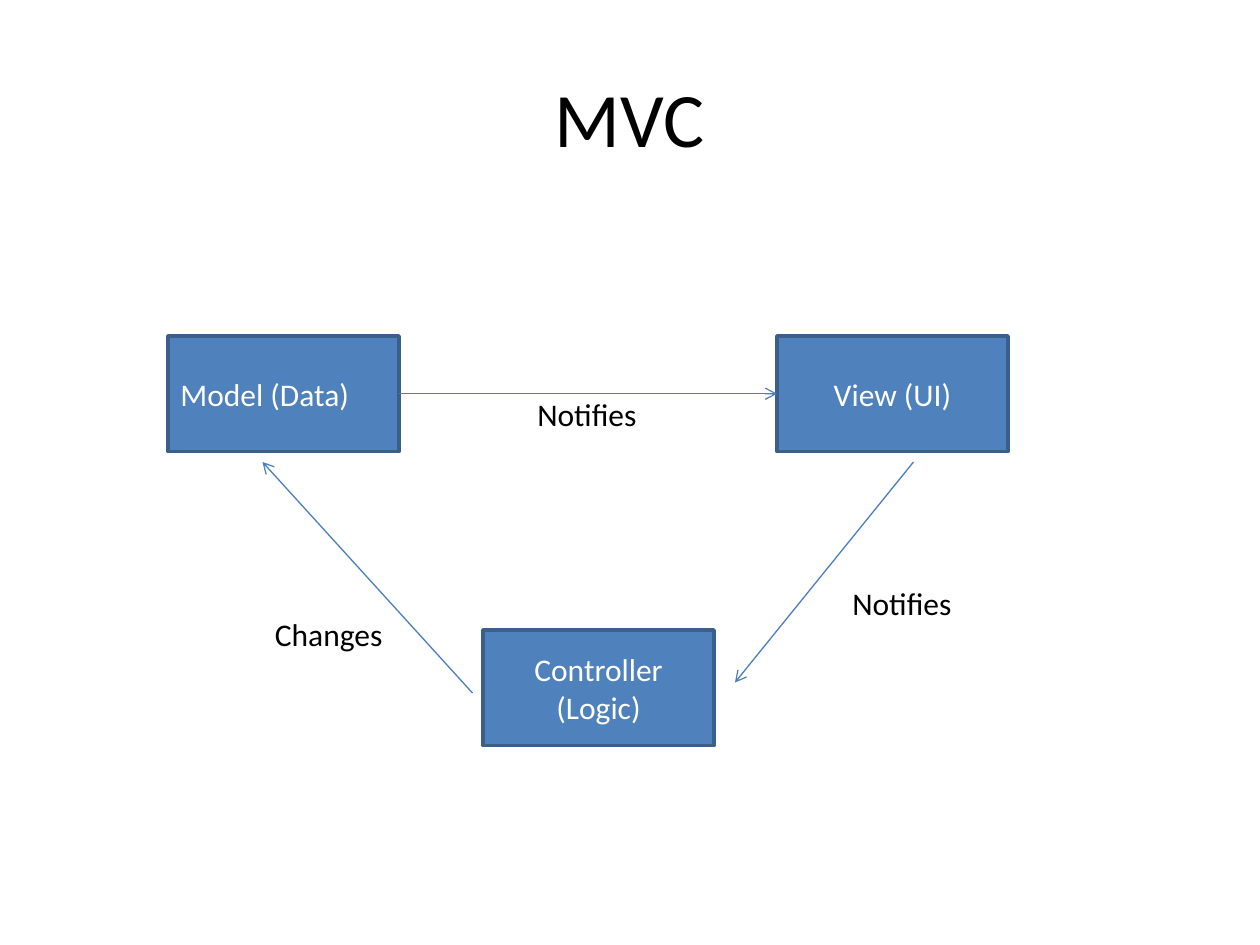
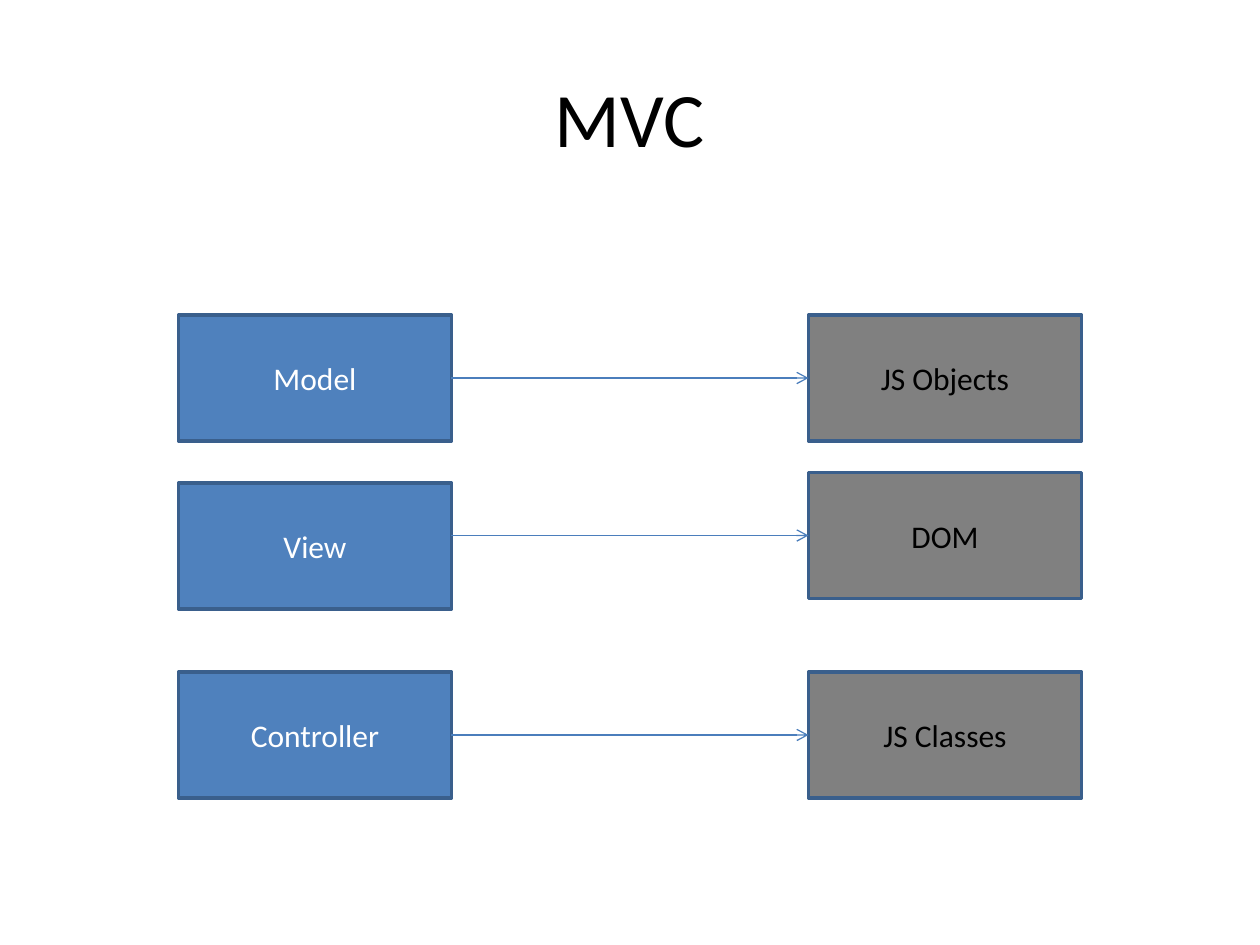
"""Build two slides on MVC: how its parts interact, and what they map to in JavaScript."""
from dataclasses import dataclass

from lxml.etree import SubElement
from pptx import Presentation
from pptx.dml.color import RGBColor
from pptx.enum.shapes import MSO_CONNECTOR, MSO_SHAPE
from pptx.enum.text import MSO_ANCHOR, MSO_AUTO_SIZE, PP_ALIGN
from pptx.oxml.ns import qn
from pptx.util import Inches, Pt


@dataclass(frozen=True)
class Theme:
    font: str = "Calibri"
    title_size: Pt = Pt(44)
    body_size: Pt = Pt(18)
    black: RGBColor = RGBColor(0x00, 0x00, 0x00)
    white: RGBColor = RGBColor(0xFF, 0xFF, 0xFF)
    blue: RGBColor = RGBColor(0x4F, 0x81, 0xBD)
    gray: RGBColor = RGBColor(0x80, 0x80, 0x80)
    border: RGBColor = RGBColor(0x3A, 0x5F, 0x8C)
    arrow: RGBColor = RGBColor(0x4B, 0x7E, 0xBC)


theme = Theme()
presentation = Presentation()
presentation.slide_width = Inches(10)
presentation.slide_height = Inches(7.5)
COLUMN = presentation.slide_width / 120
ROW = presentation.slide_height / 90
TOP, LEFT, BOTTOM, RIGHT = range(4)


def add_box(slide, text, column, row, columns, rows, fill, color):
    """Add a bordered box with centred text at a place on the grid."""
    box = slide.shapes.add_shape(
        MSO_SHAPE.RECTANGLE, round(column * COLUMN), round(row * ROW),
        round(columns * COLUMN), round(rows * ROW))
    box.shadow.inherit = False
    box.fill.solid()
    box.fill.fore_color.rgb = fill
    box.line.color.rgb = theme.border
    box.line.width = Pt(2)
    box.text_frame.text = text
    box.text_frame.vertical_anchor = MSO_ANCHOR.MIDDLE
    paragraph = box.text_frame.paragraphs[0]
    paragraph.alignment = PP_ALIGN.CENTER
    paragraph.font.name = theme.font
    paragraph.font.size = theme.body_size
    paragraph.font.color.rgb = color
    return box


def add_arrow(slide, start, end):
    """Add an open-headed arrow between two (column, row) points."""
    arrow = slide.shapes.add_connector(
        MSO_CONNECTOR.STRAIGHT, round(start[0] * COLUMN), round(start[1] * ROW),
        round(end[0] * COLUMN), round(end[1] * ROW))
    arrow.line.color.rgb = theme.arrow
    arrow.line.width = Pt(0.75)
    properties = arrow.element.spPr
    SubElement(properties.find(qn("a:ln")), qn("a:tailEnd"), type="arrow")
    SubElement(properties, qn("a:effectLst"))
    return arrow


slides = []
for _ in range(2):
    slide = presentation.slides.add_slide(presentation.slide_layouts[5])
    title = slide.shapes.title
    title.left, title.top = round(6 * COLUMN), round(3.6 * ROW)
    title.width, title.height = round(108 * COLUMN), round(15 * ROW)
    title.text_frame.text = "MVC"
    title.text_frame.vertical_anchor = MSO_ANCHOR.MIDDLE
    paragraph = title.text_frame.paragraphs[0]
    paragraph.alignment = PP_ALIGN.CENTER
    paragraph.font.name = theme.font
    paragraph.font.size = theme.title_size
    paragraph.font.color.rgb = theme.black
    slides.append(slide)
cycle_slide, mapping_slide = slides

model, controller, view = [
    add_box(cycle_slide, text, column, row, 22, 11, theme.blue, theme.white)
    for text, column, row in (
        ("Model (Data)", 16, 32), ("Controller (Logic)", 46, 60), ("View (UI)", 74, 32))]
model.text_frame.paragraphs[0].alignment = PP_ALIGN.LEFT

model_to_view = add_arrow(cycle_slide, (38, 37.5), (74, 37.5))
model_to_view.begin_connect(model, RIGHT)
model_to_view.end_connect(view, LEFT)
add_arrow(cycle_slide, (87, 44), (70, 65))
add_arrow(cycle_slide, (45, 66), (25, 44))

for text, column, row, columns in (
        ("Notifies", 50, 37, 12), ("Notifies", 80, 55, 12), ("Changes", 25, 58, 12.8)):
    label = cycle_slide.shapes.add_textbox(
        round(column * COLUMN), round(row * ROW), round(columns * COLUMN), round(4.8 * ROW))
    label.text_frame.text = text
    label.text_frame.word_wrap = False
    label.text_frame.auto_size = MSO_AUTO_SIZE.SHAPE_TO_FIT_TEXT
    paragraph = label.text_frame.paragraphs[0]
    paragraph.font.name = theme.font
    paragraph.font.size = theme.body_size
    paragraph.font.color.rgb = theme.black

for part, part_row, target, target_row in (
        ("Model", 30, "JS Objects", 30),
        ("View", 46, "DOM", 45),
        ("Controller", 64, "JS Classes", 64)):
    part_box = add_box(mapping_slide, part, 17, part_row, 26, 12, theme.blue, theme.white)
    target_box = add_box(mapping_slide, target, 77, target_row, 26, 12, theme.gray, theme.black)
    middle = target_row + 6
    arrow = add_arrow(mapping_slide, (43, middle), (77, middle))
    arrow.end_connect(target_box, LEFT)
    if part_row == target_row:
        arrow.begin_connect(part_box, RIGHT)

presentation.save("out.pptx")
